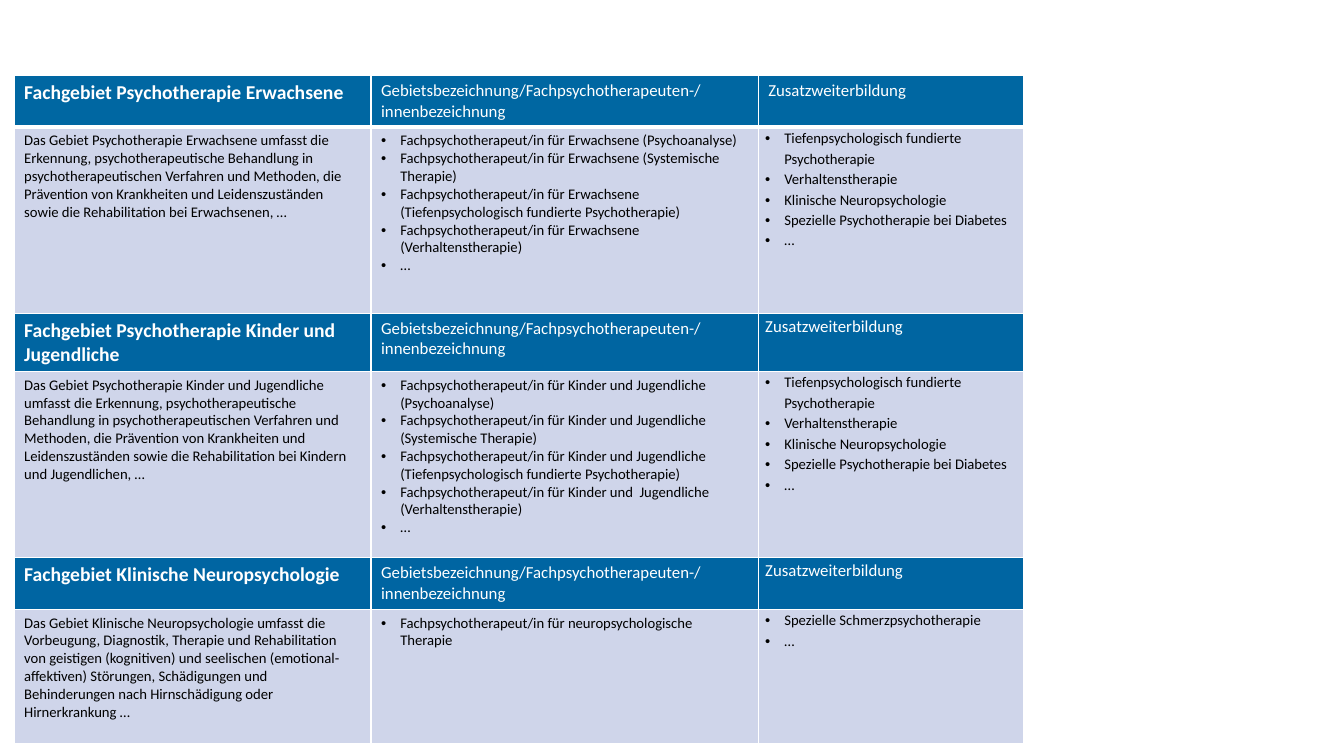
from lxml.etree import SubElement
from pptx import Presentation
from pptx.dml.color import RGBColor
from pptx.oxml.ns import qn
from pptx.util import Inches, Pt

# Content: one entry per field, (field, description, titles, further trainings)
TITLE_HEADING = "Gebietsbezeichnung/Fachpsychotherapeuten-/innenbezeichnung"
TRAINING_HEADING = "Zusatzweiterbildung"
TRAININGS = [
    "Tiefenpsychologisch fundierte Psychotherapie",
    "Verhaltenstherapie",
    "Klinische Neuropsychologie",
    "Spezielle Psychotherapie bei Diabetes",
    "…",
]
FIELDS = [
    (
        "Fachgebiet Psychotherapie Erwachsene",
        "Das Gebiet Psychotherapie Erwachsene umfasst die Erkennung, "
        "psychotherapeutische Behandlung in psychotherapeutischen Verfahren und "
        "Methoden, die Prävention von Krankheiten und Leidenszuständen sowie die "
        "Rehabilitation bei Erwachsenen, …",
        [
            "Fachpsychotherapeut/in für Erwachsene (Psychoanalyse)",
            "Fachpsychotherapeut/in für Erwachsene (Systemische Therapie)",
            "Fachpsychotherapeut/in für Erwachsene (Tiefenpsychologisch fundierte Psychotherapie)",
            "Fachpsychotherapeut/in für Erwachsene (Verhaltenstherapie)",
            "…",
        ],
        TRAININGS,
    ),
    (
        "Fachgebiet Psychotherapie Kinder und Jugendliche",
        "Das Gebiet Psychotherapie Kinder und Jugendliche umfasst die Erkennung, "
        "psychotherapeutische Behandlung in psychotherapeutischen Verfahren und "
        "Methoden, die Prävention von Krankheiten und Leidenszuständen sowie die "
        "Rehabilitation bei Kindern und Jugendlichen, …",
        [
            "Fachpsychotherapeut/in für Kinder und Jugendliche (Psychoanalyse)",
            "Fachpsychotherapeut/in für Kinder und Jugendliche (Systemische Therapie)",
            "Fachpsychotherapeut/in für Kinder und Jugendliche (Tiefenpsychologisch fundierte Psychotherapie)",
            "Fachpsychotherapeut/in für Kinder und  Jugendliche (Verhaltenstherapie)",
            "…",
        ],
        TRAININGS,
    ),
    (
        "Fachgebiet Klinische Neuropsychologie",
        "Das Gebiet Klinische Neuropsychologie umfasst die Vorbeugung, Diagnostik, "
        "Therapie und Rehabilitation von geistigen (kognitiven) und seelischen "
        "(emotional-affektiven) Störungen, Schädigungen und Behinderungen nach "
        "Hirnschädigung oder Hirnerkrankung …",
        ["Fachpsychotherapeut/in für neuropsychologische Therapie"],
        ["Spezielle Schmerzpsychotherapie", "…"],
    ),
]

# Format
FONT = "Calibri"
WHITE = RGBColor(0xFF, 0xFF, 0xFF)
BLACK = RGBColor(0x00, 0x00, 0x00)
PALE = RGBColor(0xCF, 0xD5, 0xEA)
HEADER_BLUES = [RGBColor(0x00, 0x67, 0xA2), RGBColor(0x00, 0x65, 0xA1), RGBColor(0x00, 0x65, 0xA2)]
COLUMN_WIDTHS = [3.54, 3.84, 2.63]
HEADER_HEIGHT = 0.51
BODY_HEIGHTS = [1.85, 1.85, 1.33]
BULLET_INDENT = Inches(0.19)


def add_borders(cell, bottom):
    properties = cell._tc.get_or_add_tcPr()
    for side, width in (("lnL", 1), ("lnR", 1), ("lnT", 1), ("lnB", bottom)):
        line = SubElement(properties, qn(f"a:{side}"), w=str(Pt(width)))
        fill = SubElement(line, qn("a:solidFill"))
        SubElement(fill, qn("a:srgbClr"), val=str(WHITE))


def write_cell(cell, lines, *, fill, color=BLACK, size=10.5, bold=False,
               bullets=False, tight=False, bottom=1):
    add_borders(cell, bottom)
    cell.fill.solid()
    cell.fill.fore_color.rgb = fill
    if tight:
        cell.margin_left = cell.margin_right = Inches(0.07)
        cell.margin_top = cell.margin_bottom = 0
    frame = cell.text_frame
    for index, line in enumerate(lines):
        paragraph = frame.add_paragraph() if index else frame.paragraphs[0]
        if tight:
            paragraph.line_spacing = 1.15
        if bullets:
            properties = paragraph._p.get_or_add_pPr()
            properties.set("marL", str(BULLET_INDENT))
            properties.set("indent", str(-BULLET_INDENT))
            SubElement(properties, qn("a:buFont"), typeface="Arial")
            SubElement(properties, qn("a:buChar"), char="•")
        run = paragraph.add_run()
        run.text = line
        run.font.name = FONT
        run.font.size = Pt(size)
        run.font.bold = bold
        run.font.color.rgb = color


# Slide and table
presentation = Presentation()
presentation.slide_width = Inches(13.33)
presentation.slide_height = Inches(7.5)
slide = presentation.slides.add_slide(presentation.slide_layouts[6])
row_heights = [height for body in BODY_HEIGHTS for height in (HEADER_HEIGHT, body)]
overview = slide.shapes.add_table(
    len(row_heights), len(COLUMN_WIDTHS), Inches(0.14), Inches(0.75),
    Inches(sum(COLUMN_WIDTHS)), Inches(sum(row_heights))).table
overview.horz_banding = False
for column, width in zip(overview.columns, COLUMN_WIDTHS):
    column.width = Inches(width)
for row, height in zip(overview.rows, row_heights):
    row.height = Inches(height)

# A heading row and a body row per field
for number, (field, description, titles, trainings) in enumerate(FIELDS):
    heading, body = 2 * number, 2 * number + 1
    first = number == 0
    heading_format = dict(fill=HEADER_BLUES[number], color=WHITE, bottom=3 if first else 1)
    write_cell(overview.cell(heading, 0), [field], size=14, bold=True, **heading_format)
    write_cell(overview.cell(heading, 1), [TITLE_HEADING], size=12, **heading_format)
    write_cell(overview.cell(heading, 2), [TRAINING_HEADING], size=12,
               tight=not first, **heading_format)
    write_cell(overview.cell(body, 0), [description], fill=PALE)
    write_cell(overview.cell(body, 1), titles, fill=PALE, bullets=True)
    write_cell(overview.cell(body, 2), trainings, fill=PALE, bullets=True, tight=True)

presentation.save("out.pptx")
